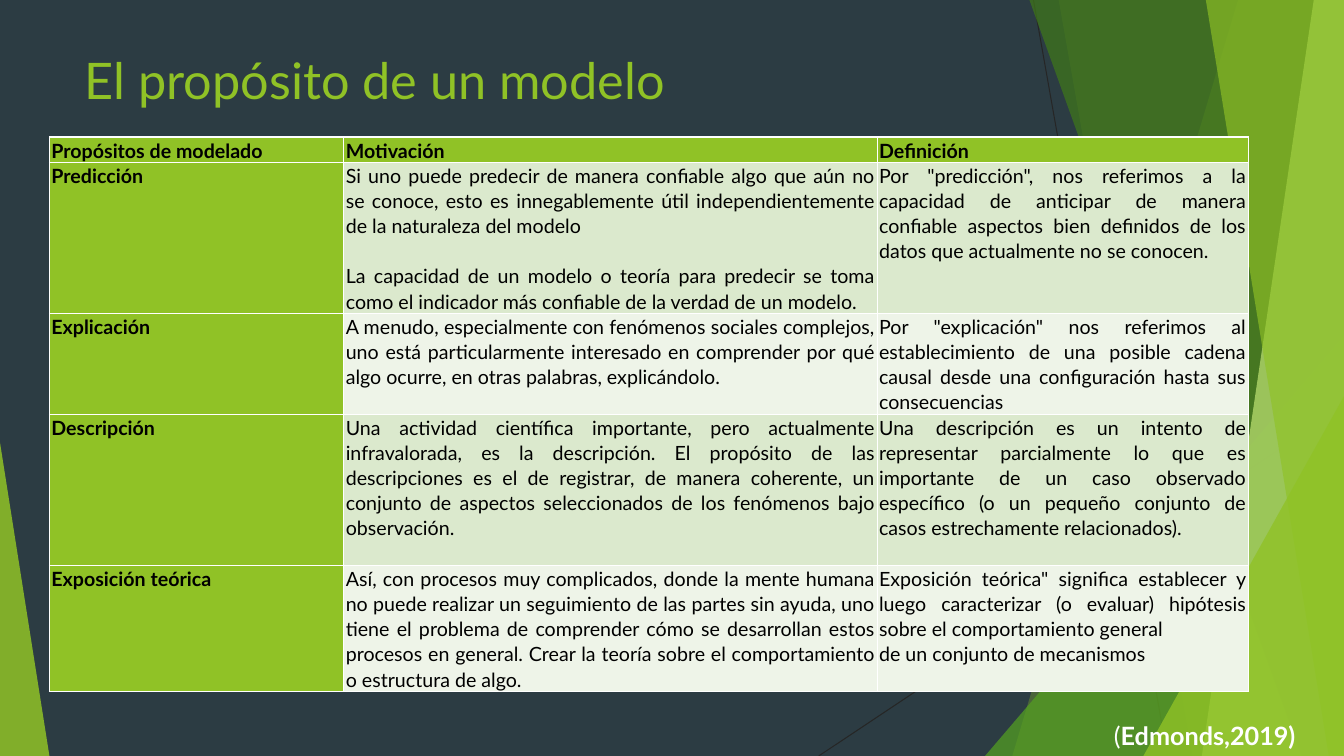
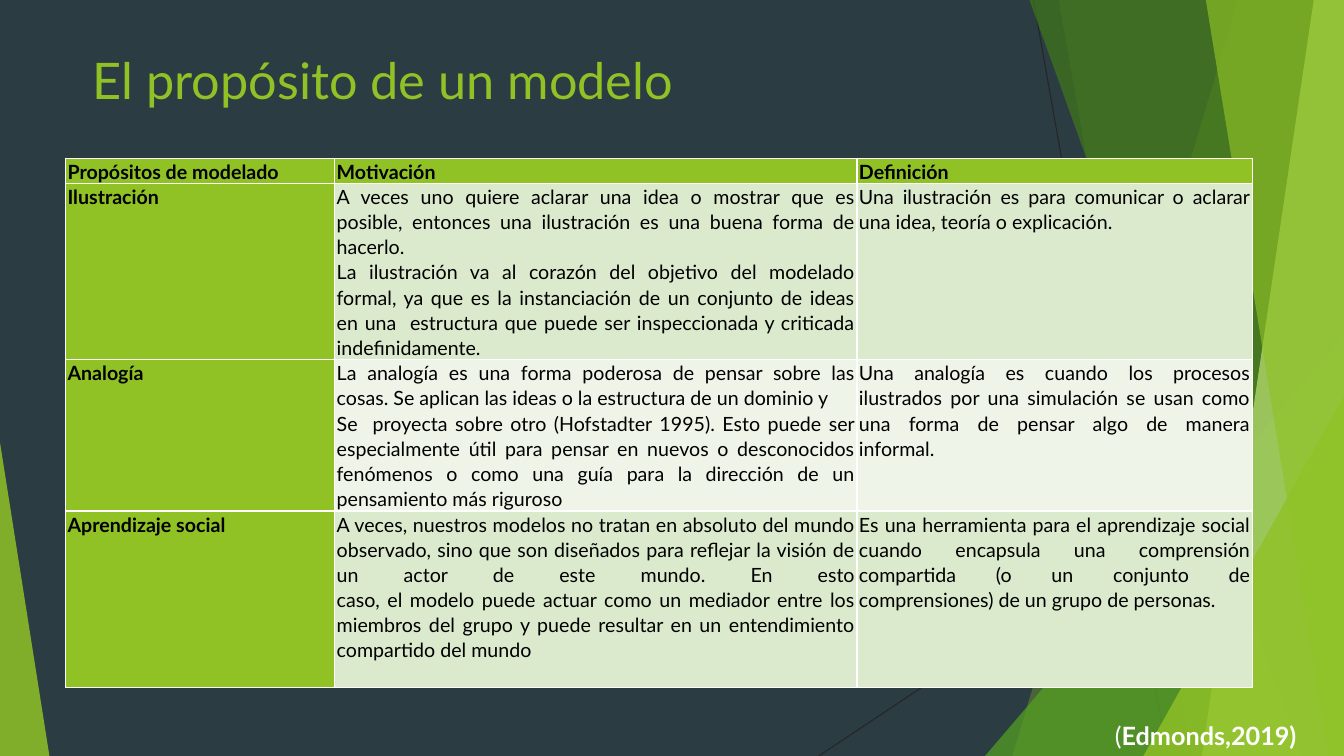
from lxml import etree
from pptx import Presentation
from pptx import util as u
from pptx.dml.color import RGBColor
from pptx.enum import shapes, text
from pptx.oxml.ns import qn

FONT = "Lato"
WIDTH, HEIGHT = 13.33, 7.5
COLORS = {
    "background": "2C3C43",
    "lime": "90C226",
    "green": "54A021",
    "forest": "3F7819",
    "pale": "C0E474",
    "line": "262626",
    "odd_row": "DBE9CD",
    "even_row": "EEF4E8",
    "black": "000000",
    "white": "FFFFFF",
}
TITLE = "El propósito de un modelo"
HEADERS = ["Propósitos de modelado", "Motivación", "Definición"]

FIRST_ROWS = [
    ("Predicción",
     ["Si uno puede predecir de manera confiable algo que aún no se conoce, esto es innegablemente útil "
      "independientemente de la naturaleza del modelo",
      "La capacidad de un modelo o teoría para predecir se toma como el indicador más confiable de la "
      "verdad de un modelo."],
     ['Por "predicción", nos referimos a la capacidad de anticipar de manera confiable aspectos bien '
      "definidos de los datos que actualmente no se conocen."]),
    ("Explicación",
     ["A menudo, especialmente con fenómenos sociales complejos, uno está particularmente interesado en "
      "comprender por qué algo ocurre, en otras palabras, explicándolo."],
     ['Por "explicación" nos referimos al establecimiento de una posible cadena causal desde una '
      "configuración hasta sus consecuencias"]),
    ("Descripción",
     ["Una actividad científica importante, pero actualmente infravalorada, es la descripción. El "
      "propósito de las descripciones es el de registrar, de manera coherente, un conjunto de aspectos "
      "seleccionados de los fenómenos bajo observación."],
     ["Una descripción es un intento de representar parcialmente lo que es importante de un caso "
      "observado específico (o un pequeño conjunto de casos estrechamente relacionados)."]),
    ("Exposición teórica",
     ["Así, con procesos muy complicados, donde la mente humana no puede realizar un seguimiento de las "
      "partes sin ayuda, uno tiene el problema de comprender cómo se desarrollan estos procesos en "
      "general. Crear la teoría sobre el comportamiento o estructura de algo."],
     ['Exposición teórica" significa establecer y luego caracterizar (o evaluar) hipótesis sobre el '
      "comportamiento general",
      "de un conjunto de mecanismos"]),
]
SECOND_ROWS = [
    ("Ilustración",
     ["A veces uno quiere aclarar una idea o mostrar que es posible, entonces una ilustración es una "
      "buena forma de hacerlo.",
      "La ilustración va al corazón del objetivo del modelado formal, ya que es la instanciación de un "
      "conjunto de ideas en una  estructura que puede ser inspeccionada y criticada indefinidamente."],
     ["Una ilustración es para comunicar o aclarar una idea, teoría o explicación."]),
    ("Analogía",
     ["La analogía es una forma poderosa de pensar sobre las cosas. Se aplican las ideas o la estructura "
      "de un dominio y",
      "Se  proyecta sobre otro (Hofstadter 1995). Esto puede ser especialmente útil para pensar en nuevos "
      "o desconocidos fenómenos o como una guía para la dirección de un pensamiento más riguroso"],
     ["Una analogía es cuando los procesos ilustrados por una simulación se usan como una forma de pensar "
      "algo de manera informal."]),
    ("Aprendizaje social",
     ["A veces, nuestros modelos no tratan en absoluto del mundo observado, sino que son diseñados para "
      "reflejar la visión de un actor de este mundo. En esto\ncaso, el modelo puede actuar como un "
      "mediador entre los miembros del grupo y puede resultar en un entendimiento compartido del mundo"],
     ["Es una herramienta para el aprendizaje social cuando encapsula una comprensión compartida (o un "
      "conjunto de comprensiones) de un grupo de personas."]),
]


def rgb(name):
    """Return the named colour."""
    return RGBColor.from_string(COLORS[name])


def add_run(paragraph, content, size, color, bold=False):
    """Append one formatted run to a paragraph."""
    run = paragraph.add_run()
    run.text = content
    run.font.name = FONT
    run.font.size = u.Pt(size)
    run.font.bold = bold
    run.font.color.rgb = rgb(color)


def paint(shape, color, opacity):
    """Give a shape a translucent fill without outline or shadow."""
    shape.shadow.inherit = False
    shape.fill.solid()
    shape.fill.fore_color.rgb = rgb(color)
    tint = shape.element.spPr.find(".//" + qn("a:srgbClr"))
    etree.SubElement(tint, qn("a:alpha")).set("val", str(opacity * 1000))
    shape.line.fill.background()


def add_ray(group, start, end):
    """Draw a thin dark line across the background."""
    ends = [u.Inches(value) for value in (*start, *end)]
    ray = group.shapes.add_connector(shapes.MSO_CONNECTOR.STRAIGHT, *ends)
    ray.line.color.rgb = rgb("line")
    ray.line.width = u.Pt(0.75)
    etree.SubElement(ray.element.spPr, qn("a:effectLst"))


def add_band(group, top_x, bottom_x, color, opacity):
    """Draw a slanted band that reaches the right edge of the slide."""
    corners = [(u.Inches(x), u.Inches(y)) for x, y in
               ((top_x, 0), (WIDTH, 0), (WIDTH, HEIGHT), (bottom_x, HEIGHT))]
    builder = group.shapes.build_freeform(*corners[0])
    builder.add_line_segments(corners[1:], close=True)
    paint(builder.convert_to_shape(), color, opacity)


def add_corner(group, left, top, width, apex, color, opacity):
    """Draw a right triangle standing on the bottom edge."""
    corner = group.shapes.add_shape(
        shapes.MSO_SHAPE.ISOSCELES_TRIANGLE,
        u.Inches(left), u.Inches(top), u.Inches(width), u.Inches(HEIGHT - top))
    corner.adjustments[0] = apex
    paint(corner, color, opacity)


def decorate_layout(layout, slide):
    """Build the shared background and place it in the layout."""
    layout.background.fill.solid()
    layout.background.fill.fore_color.rgb = rgb("background")
    for placeholder in list(layout.placeholders)[1:]:
        layout.shapes.element.remove(placeholder.element)
    group = slide.shapes.add_group_shape()
    add_ray(group, (10.25, 0), (11.58, HEIGHT))
    add_ray(group, (WIDTH, 4.03), (8.12, HEIGHT))
    add_band(group, 12.28, 10.04, "lime", 30)
    add_band(group, 10.5, 11.83, "lime", 20)
    add_corner(group, 9.77, 3.33, 3.56, 1, "green", 72)
    add_band(group, 10.21, 12.91, "forest", 70)
    add_band(group, 13.03, 11.92, "pale", 70)
    add_band(group, 11.96, 13.18, "lime", 65)
    add_corner(group, 11.34, 3.93, 1.99, 1, "lime", 80)
    add_corner(group, 0, 4.39, 0.49, 0, "lime", 85)
    layout.shapes.element.insert(2, group.element)


def set_title(slide, left):
    """Place and fill the title placeholder."""
    title = slide.shapes.title
    title.left, title.top = u.Inches(left), u.Inches(0.44)
    title.width, title.height = u.Inches(9.4), u.Inches(1.44)
    frame = title.text_frame
    frame.auto_size = text.MSO_AUTO_SIZE.NONE
    frame.vertical_anchor = text.MSO_ANCHOR.TOP
    frame.paragraphs[0].alignment = text.PP_ALIGN.LEFT
    add_run(frame.paragraphs[0], TITLE, 36, "lime")


def fill_cell(cell, paragraphs, color, heading, gap=0):
    """Write paragraphs into a coloured table cell."""
    cell.fill.solid()
    cell.fill.fore_color.rgb = rgb(color)
    cell.margin_left = cell.margin_right = u.Inches(0.02)
    cell.margin_top = cell.margin_bottom = 0
    frame = cell.text_frame
    for index, content in enumerate(paragraphs):
        paragraph = frame.add_paragraph() if index else frame.paragraphs[0]
        paragraph.line_spacing = 1.07
        paragraph.space_before = u.Pt(gap if index else 0)
        paragraph.alignment = text.PP_ALIGN.LEFT if heading else text.PP_ALIGN.JUSTIFY
        for number, line in enumerate(content.split("\n")):
            if number:
                paragraph.add_line_break()
            add_run(paragraph, line, 14, "black", heading)


def add_purpose_table(slide, left, top, widths, heights, rows, gap):
    """Add the table of modelling purposes."""
    table = slide.shapes.add_table(
        len(heights), len(widths), u.Inches(left), u.Inches(top),
        u.Inches(sum(widths)), u.Inches(sum(heights))).table
    table.first_col = True
    for column, width in zip(table.columns, widths):
        column.width = u.Inches(width)
    for row, height in zip(table.rows, heights):
        row.height = u.Inches(height)
    for column, header in enumerate(HEADERS):
        fill_cell(table.cell(0, column), [header], "lime", True)
    for number, (purpose, *details) in enumerate(rows, 1):
        fill_cell(table.cell(number, 0), [purpose], "lime", True)
        color = "odd_row" if number % 2 else "even_row"
        for column, paragraphs in enumerate(details, 1):
            spacing = gap if column == 1 else 0
            fill_cell(table.cell(number, column), paragraphs, color, False, spacing)


def add_citation(slide, left):
    """Add the citation at the bottom right."""
    box = slide.shapes.add_textbox(u.Inches(left), u.Inches(7.1), u.Inches(2.13), u.Inches(0.4))
    frame = box.text_frame
    frame.word_wrap = False
    frame.auto_size = text.MSO_AUTO_SIZE.SHAPE_TO_FIT_TEXT
    add_run(frame.paragraphs[0], "(", 18, "white")
    add_run(frame.paragraphs[0], "Edmonds,2019)", 18, "white", True)


def main():
    """Build and save the presentation."""
    presentation = Presentation()
    presentation.slide_width, presentation.slide_height = u.Inches(WIDTH), u.Inches(HEIGHT)
    layout = presentation.slide_layouts[5]
    first = presentation.slides.add_slide(layout)
    decorate_layout(layout, first)
    set_title(first, 0.74)
    add_purpose_table(first, 0.49, 1.36, [2.92, 5.29, 3.68],
                      [0.25, 1.5, 1, 1.5, 1.25], FIRST_ROWS, 18)
    add_citation(first, 10.95)

    second = presentation.slides.add_slide(layout)
    set_title(second, 0.82)
    add_purpose_table(second, 0.65, 1.57, [2.67, 5.18, 3.92],
                      [0.25, 1.75, 1.5, 1.75], SECOND_ROWS, 0)
    add_citation(second, 10.96)
    presentation.save("out.pptx")


if __name__ == "__main__":
    main()
